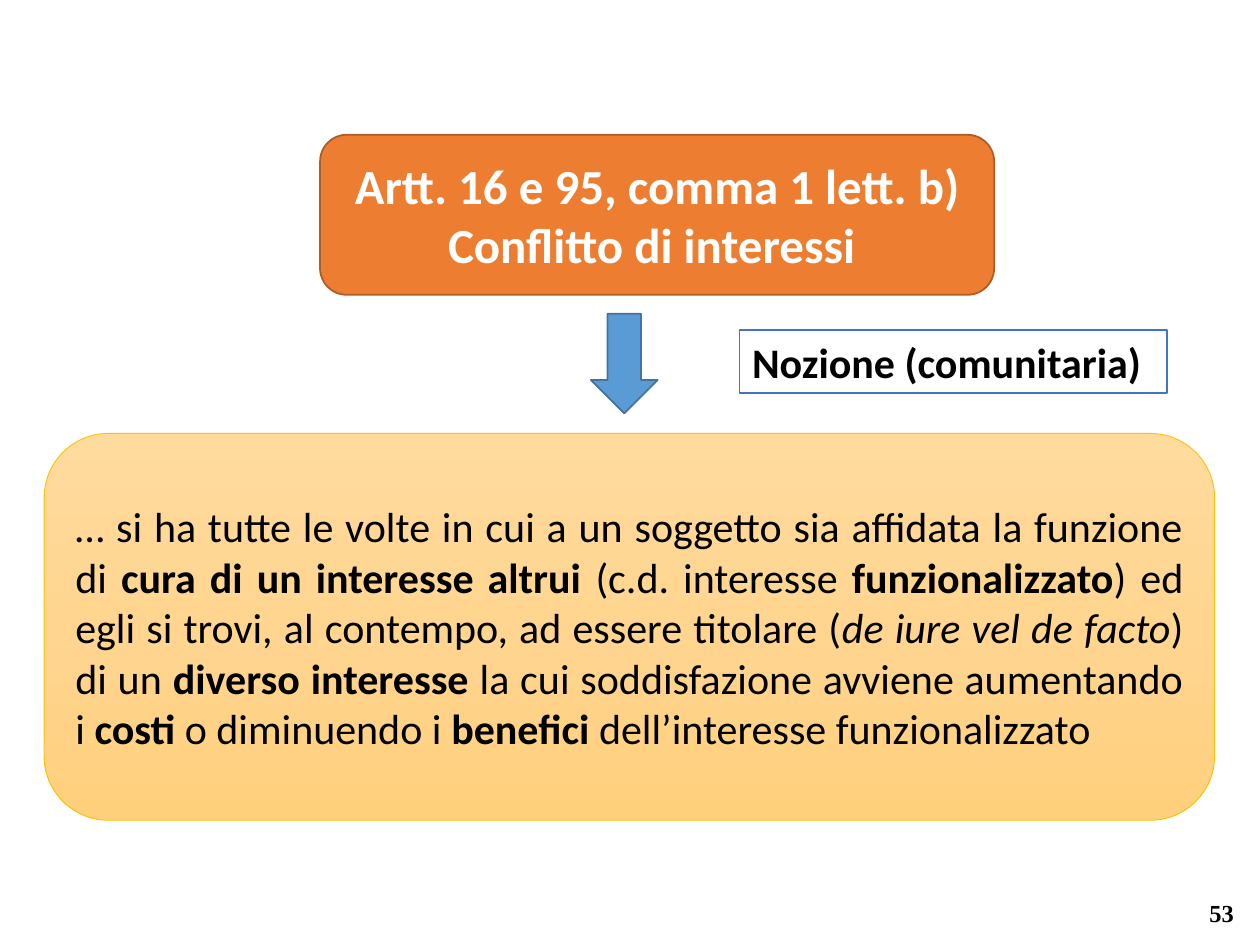
from copy import deepcopy

from pptx import Presentation
from pptx.dml.color import RGBColor
from pptx.enum.shapes import MSO_SHAPE
from pptx.enum.text import MSO_ANCHOR, PP_ALIGN
from pptx.oxml.ns import qn
from pptx.util import Inches, Pt

TITLE = {"name": "Calibri", "size": Pt(28), "bold": True}
LABEL = {"name": "Calibri", "size": Pt(24), "bold": True}
BODY = {"name": "Calibri", "size": Pt(24), "bold": False}
NUMBER = {"name": "Times New Roman", "size": Pt(14), "bold": True}
STRONG = {"bold": True}
ITALIC = {"italic": True}

DEFINITION = [
    ("… si ha tutte le volte in cui a un soggetto sia affidata la funzione di ", {}),
    ("cura di un interesse altrui ", STRONG),
    ("(c.d. interesse ", {}),
    ("funzionalizzato", STRONG),
    (") ed egli si trovi, al contempo, ad essere titolare (", {}),
    ("de iure vel de facto", ITALIC),
    (") di un ", {}),
    ("diverso interesse ", STRONG),
    ("la cui soddisfazione avviene aumentando i ", {}),
    ("costi", STRONG),
    (" o diminuendo i", {}),
    (" benefici", STRONG),
    (" dell’interesse funzionalizzato", {}),
]


def color(value):
    return RGBColor.from_string(value)


def fill_gradient(shape, stops):
    """Fill from top to bottom with evenly spaced colours."""
    shape.fill.gradient()
    shape.fill.gradient_angle = 270
    stop_list = shape._element.spPr.find(qn("a:gradFill")).find(qn("a:gsLst"))
    while len(stop_list) < len(stops):
        stop_list.append(deepcopy(stop_list[-1]))
    for index, (stop, value) in enumerate(zip(shape.fill.gradient_stops, stops)):
        stop.position = index / (len(stops) - 1)
        stop.color.rgb = color(value)


def add_shape(page, kind, place, fill, line, width=1):
    shape = page.shapes.add_shape(kind, *map(Inches, place))
    shape.shadow.inherit = False
    if isinstance(fill, list):
        fill_gradient(shape, fill)
    else:
        shape.fill.solid()
        shape.fill.fore_color.rgb = color(fill)
    shape.line.color.rgb = color(line)
    shape.line.width = Pt(width)
    return shape


def write(box, paragraphs, style, ink, align, anchor=MSO_ANCHOR.MIDDLE):
    """Write paragraphs, each a list of (text, format changes)."""
    frame = box.text_frame
    frame.word_wrap = True
    frame.vertical_anchor = anchor
    for index, spans in enumerate(paragraphs):
        para = frame.add_paragraph() if index else frame.paragraphs[0]
        para.alignment = align
        for text, changes in spans:
            span = para.add_run()
            span.text = text
            for name, value in {**style, **changes}.items():
                setattr(span.font, name, value)
            span.font.color.rgb = color(ink)


def main():
    deck = Presentation()
    deck.slide_width, deck.slide_height = Inches(10), Inches(7.5)
    page = deck.slides.add_slide(deck.slide_layouts[6])

    # Page number
    number = page.shapes.add_textbox(*map(Inches, (7.64, 7.04, 2.25, 0.4)))
    write(number, [[("53", {})]], NUMBER, "000000", PP_ALIGN.RIGHT)

    # Definition
    definition = add_shape(page, MSO_SHAPE.ROUNDED_RECTANGLE, (0.35, 3.44, 9.29, 3.07),
                           ["FFDB9E", "FFD590", "FFD07C"], "FFC000", 0.5)
    write(definition, [DEFINITION], BODY, "000000", PP_ALIGN.JUSTIFY)

    # Heading
    heading = add_shape(page, MSO_SHAPE.ROUNDED_RECTANGLE, (2.54, 1.07, 5.35, 1.27),
                        "ED7D31", "AF5C24")
    lines = ["Artt. 16 e 95, comma 1 lett. b)", "Conflitto di interessi "]
    write(heading, [[(line, {})] for line in lines], TITLE, "FFFFFF", PP_ALIGN.CENTER)

    # Arrow from heading to definition
    add_shape(page, MSO_SHAPE.DOWN_ARROW, (4.69, 2.49, 0.53, 0.79), "5B9BD5", "43739E")

    # Label beside the arrow
    label = add_shape(page, MSO_SHAPE.RECTANGLE, (5.87, 2.62, 3.39, 0.5), "FFFFFF", "4472C4")
    write(label, [[("Nozione (comunitaria)", {})]], LABEL, "000000",
          PP_ALIGN.LEFT, MSO_ANCHOR.TOP)

    deck.save("out.pptx")


if __name__ == "__main__":
    main()
